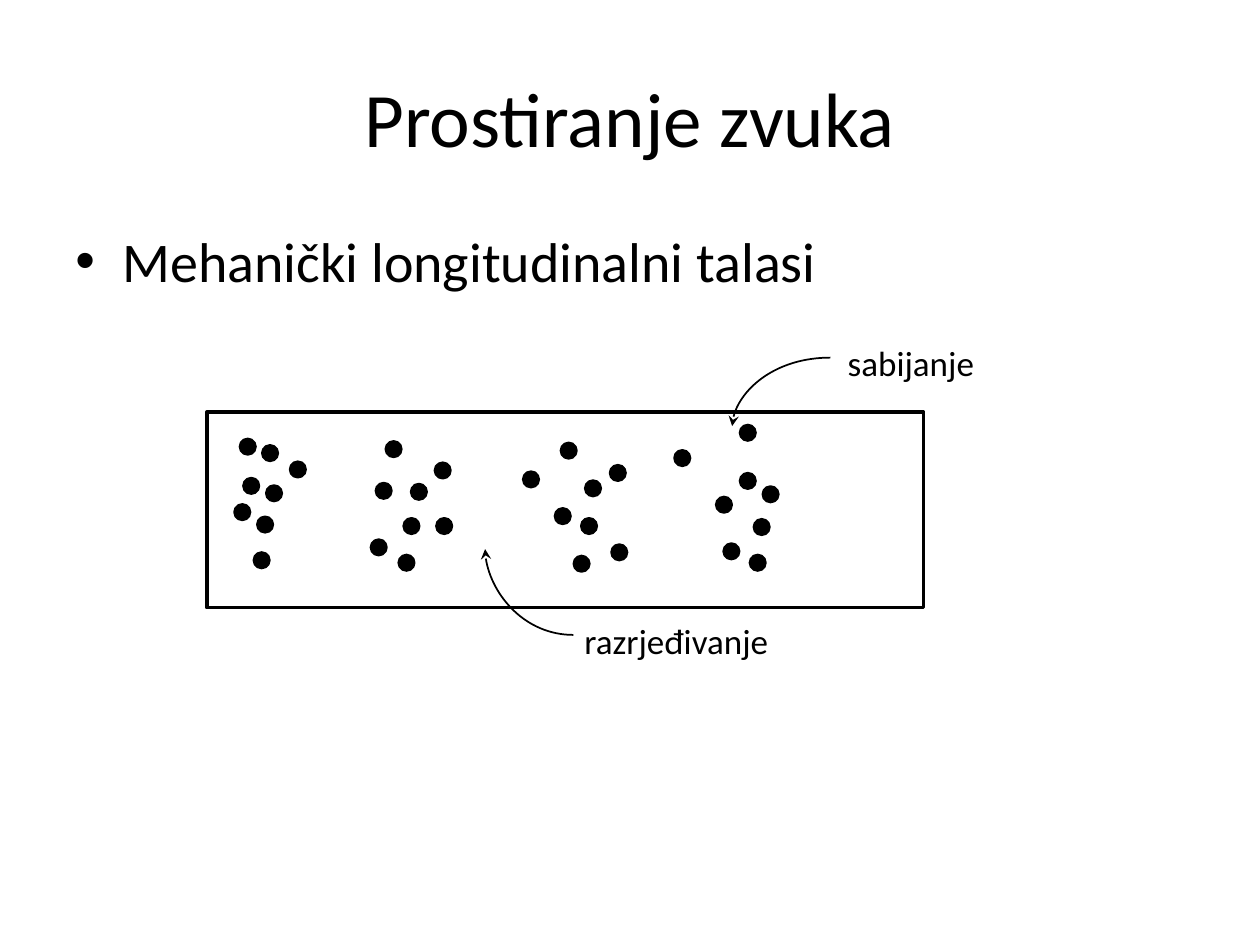
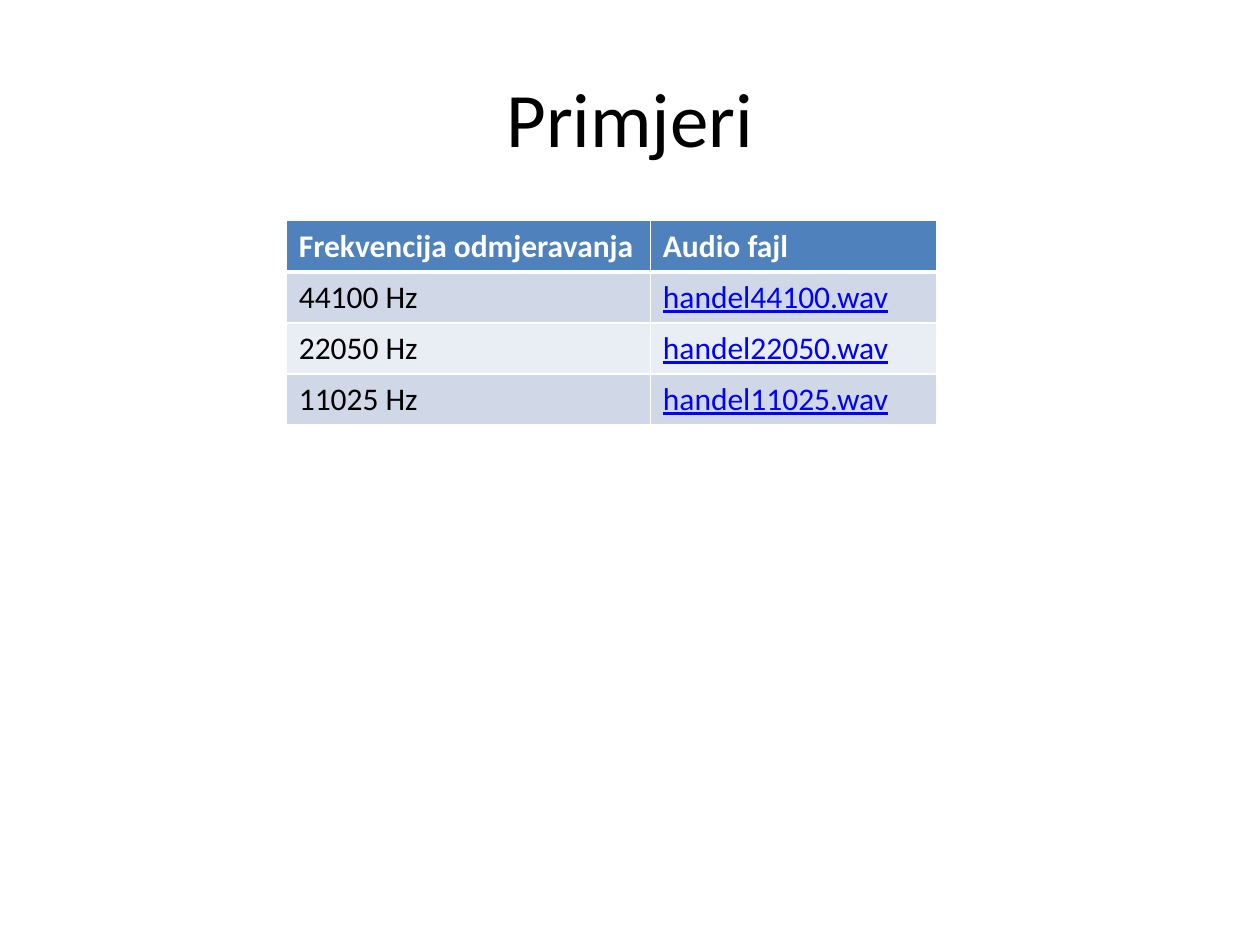
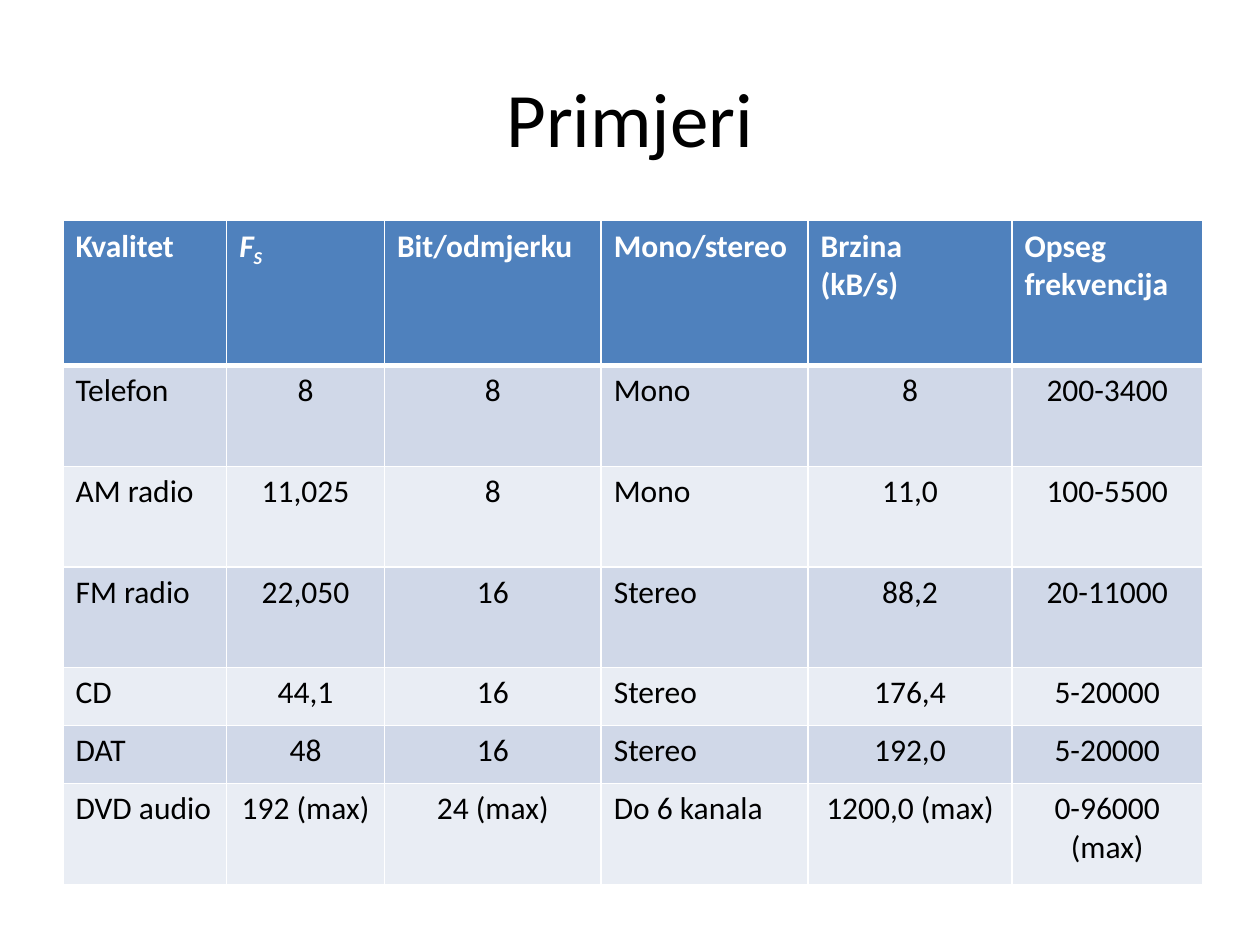
"""Build three slides about sound propagation and audio sampling."""
from lxml.etree import SubElement
from pptx import Presentation
from pptx.dml.color import RGBColor
from pptx.enum.shapes import MSO_SHAPE
from pptx.enum.text import MSO_ANCHOR, PP_ALIGN
from pptx.oxml.ns import qn
from pptx.util import Cm, Pt

BLACK = RGBColor(0x00, 0x00, 0x00)
WHITE = RGBColor(0xFF, 0xFF, 0xFF)
HEADER_BLUE = RGBColor(0x4F, 0x81, 0xBD)
BAND_DARK = RGBColor(0xD0, 0xD8, 0xE8)
BAND_LIGHT = RGBColor(0xE9, 0xED, 0xF4)
LINK_BLUE = RGBColor(0x00, 0x00, 0xFF)

TITLE = {"size": Pt(44), "color": BLACK}
BODY = {"size": Pt(32), "color": BLACK}
LABEL = {"size": Pt(20), "color": BLACK}
HEADER_CELL = {"size": Pt(18), "color": WHITE, "bold": True}
BODY_CELL = {"size": Pt(18), "color": BLACK, "bold": False}
FILE_CELL = BODY_CELL | {"color": LINK_BLUE, "underline": True}

TABLE_TOP = 4.45
PARTICLE_SIZE = 0.33
PARTICLE_GROUPS = [
    [(5.84, 9.3), (5.11, 11.13), (5.18, 10.41), (5.36, 9.78),
     (4.72, 10.16), (4.9, 9.63), (5.28, 8.97), (4.83, 8.84)],
    [(8.76, 9.32), (8.03, 11.18), (8.13, 10.44), (8.79, 10.44),
     (7.47, 10.87), (7.57, 9.73), (8.28, 9.75), (7.77, 8.89)],
    [(12.29, 9.37), (11.56, 11.2), (12.32, 10.97), (11.71, 10.44),
     (11.18, 10.24), (11.79, 9.68), (10.54, 9.5), (11.3, 8.92)],
    [(14.91, 8.56), (15.11, 11.18), (15.19, 10.46), (15.37, 9.8),
     (14.58, 10.95), (14.43, 10.01), (14.91, 9.53), (13.59, 9.07)],
]
FILE_ROWS = [
    ["Frekvencija odmjeravanja", "Audio fajl"],
    ["44100 Hz", "handel44100.wav"],
    ["22050 Hz", "handel22050.wav"],
    ["11025 Hz", "handel11025.wav"],
]
QUALITY_ROWS = [
    ["Kvalitet", "F", "Bit/odmjerku", "Mono/stereo", "Brzina\n(kB/s)", "Opseg\nfrekvencija"],
    ["Telefon", "8", "8", "Mono", "8", "200-3400"],
    ["AM radio", "11,025", "8", "Mono", "11,0", "100-5500"],
    ["FM radio", "22,050", "16", "Stereo", "88,2", "20-11000"],
    ["CD", "44,1", "16", "Stereo", "176,4", "5-20000"],
    ["DAT", "48", "16", "Stereo", "192,0", "5-20000"],
    ["DVD audio", "192 (max)", "24 (max)", "Do 6 kanala", "1200,0 (max)", "0-96000 (max)"],
]


def add_run(paragraph, text, style):
    """Append a formatted run to a paragraph."""
    run = paragraph.add_run()
    run.text = text
    run.font.name = "Calibri"
    for name, value in style.items():
        if name == "color":
            run.font.color.rgb = value
        else:
            setattr(run.font, name, value)
    return run


def write_text(frame, text, style, alignment=PP_ALIGN.LEFT):
    """Write each line of text as one paragraph."""
    for index, line in enumerate(text.split("\n")):
        paragraph = frame.add_paragraph() if index else frame.paragraphs[0]
        paragraph.alignment = alignment
        add_run(paragraph, line, style)


def add_text(slide, box, text, style, alignment=PP_ALIGN.LEFT, anchor=MSO_ANCHOR.TOP):
    """Add a wrapping text box and return its text frame."""
    frame = slide.shapes.add_textbox(*map(Cm, box)).text_frame
    frame.word_wrap = True
    frame.vertical_anchor = anchor
    write_text(frame, text, style, alignment)
    return frame


def add_bullet(slide, box, text):
    """Add a body text box with one bulleted paragraph."""
    paragraph = add_text(slide, box, text, BODY).paragraphs[0]
    paragraph.space_before = Pt(6.4)
    properties = paragraph._p.get_or_add_pPr()
    properties.set("marL", str(Cm(0.95)))
    properties.set("indent", str(Cm(-0.95)))
    SubElement(properties, qn("a:buFont"), typeface="Arial")
    SubElement(properties, qn("a:buChar"), char="•")


def add_titled_slide(presentation, title):
    """Add a blank slide with the shared title."""
    slide = presentation.slides.add_slide(presentation.slide_layouts[6])
    add_text(slide, (1.27, 0.76, 22.86, 3.18), title, TITLE,
             PP_ALIGN.CENTER, MSO_ANCHOR.MIDDLE)
    return slide


def add_outlined(slide, kind, box, width, fill=None):
    """Add a preset shape with a black outline."""
    shape = slide.shapes.add_shape(kind, *map(Cm, box))
    style_outline(shape, width)
    if fill is not None:
        shape.fill.solid()
        shape.fill.fore_color.rgb = fill


def style_outline(shape, width):
    """Give a shape a black outline, no fill and no shadow."""
    shape.shadow.inherit = False
    shape.fill.background()
    shape.line.color.rgb = BLACK
    shape.line.width = Pt(width)


def add_curved_arrow(slide, start, tip):
    """Draw a quarter curve that leaves start sideways and meets tip upright."""
    (start_x, start_y), (tip_x, tip_y) = start, tip
    points = [
        (start_x + 0.55 * (tip_x - start_x), start_y),
        (tip_x, tip_y + 0.45 * (start_y - tip_y)),
        tip,
    ]
    builder = slide.shapes.build_freeform(Cm(start_x), Cm(start_y))
    builder.add_line_segments([(Cm(x), Cm(y)) for x, y in points], close=False)
    shape = builder.convert_to_shape()
    style_outline(shape, 1)
    segments = list(shape._element.iter(qn("a:lnTo")))
    curve = SubElement(segments[0].getparent(), qn("a:cubicBezTo"))
    for segment in segments:
        curve.append(segment[0])
        segment.getparent().remove(segment)
    SubElement(shape.line._get_or_add_ln(), qn("a:tailEnd"), type="stealth")


def set_borders(cell, widths):
    """Draw white cell borders with the given widths in points."""
    properties = cell._tc.get_or_add_tcPr()
    for side, width in widths.items():
        line = SubElement(properties, qn(f"a:ln{side}"), w=str(Pt(width)))
        fill = SubElement(line, qn("a:solidFill"))
        SubElement(fill, qn("a:srgbClr"), val=str(WHITE))


def add_table(slide, left, rows, widths, heights, centred=(), file_columns=()):
    """Add a banded table with a header row and return it."""
    frame = slide.shapes.add_table(len(rows), len(widths), Cm(left), Cm(TABLE_TOP),
                                   Cm(sum(widths)), Cm(sum(heights)))
    table = frame.table
    for column, width in zip(table.columns, widths):
        column.width = Cm(width)
    for row, height in zip(table.rows, heights):
        row.height = Cm(height)
    for row_index, texts in enumerate(rows):
        header = row_index == 0
        band = BAND_DARK if row_index % 2 else BAND_LIGHT
        for column_index, text in enumerate(texts):
            cell = table.cell(row_index, column_index)
            set_borders(cell, {"L": 1, "R": 1, "T": 3 if row_index == 1 else 1,
                               "B": 3 if header else 1})
            cell.fill.solid()
            cell.fill.fore_color.rgb = HEADER_BLUE if header else band
            body_style = FILE_CELL if column_index in file_columns else BODY_CELL
            in_centre = column_index in centred and not header
            write_text(cell.text_frame, text, HEADER_CELL if header else body_style,
                       PP_ALIGN.CENTER if in_centre else PP_ALIGN.LEFT)
    return table


def build_propagation(presentation):
    """Show compression and rarefaction of particles in a tube."""
    slide = add_titled_slide(presentation, "Prostiranje zvuka")
    add_bullet(slide, (1.27, 4.45, 22.86, 12.57), "Mehanički longitudinalni talasi")
    add_outlined(slide, MSO_SHAPE.RECTANGLE, (4.17, 8.31, 14.45, 3.94), 2)
    for group in PARTICLE_GROUPS:
        for left, top in group:
            add_outlined(slide, MSO_SHAPE.OVAL,
                         (left, top, PARTICLE_SIZE, PARTICLE_SIZE), 1, BLACK)
    add_text(slide, (16.84, 6.76, 4.06, 1.19), "sabijanje", LABEL)
    add_text(slide, (11.53, 12.37, 4.34, 1.27), "razrjeđivanje", LABEL)
    add_curved_arrow(slide, (11.56, 12.8), (9.78, 11.07))
    add_curved_arrow(slide, (16.74, 7.21), (14.76, 8.59))


def build_files(presentation):
    """List audio files by sampling frequency."""
    slide = add_titled_slide(presentation, "Primjeri")
    add_table(slide, 5.77, FILE_ROWS, [7.34, 5.77], [1.03] * 4, file_columns={1})


def build_qualities(presentation):
    """Compare audio quality levels."""
    slide = add_titled_slide(presentation, "Primjeri")
    table = add_table(slide, 1.27, QUALITY_ROWS, [3.3, 3.18, 4.37, 4.17, 4.11, 3.84],
                      [2.92, 2.03, 2.03, 2.03, 1.17, 1.17, 2.03], centred={1, 2, 4, 5})
    paragraph = table.cell(0, 1).text_frame.paragraphs[0]
    paragraph.runs[0].font.italic = True
    subscript = add_run(paragraph, "S", HEADER_CELL | {"italic": True})
    subscript.font._element.set("baseline", "-25000")


def main():
    """Build and save the presentation."""
    presentation = Presentation()
    presentation.slide_width = Cm(25.4)
    presentation.slide_height = Cm(19.05)
    build_propagation(presentation)
    build_files(presentation)
    build_qualities(presentation)
    presentation.save("out.pptx")


if __name__ == "__main__":
    main()
